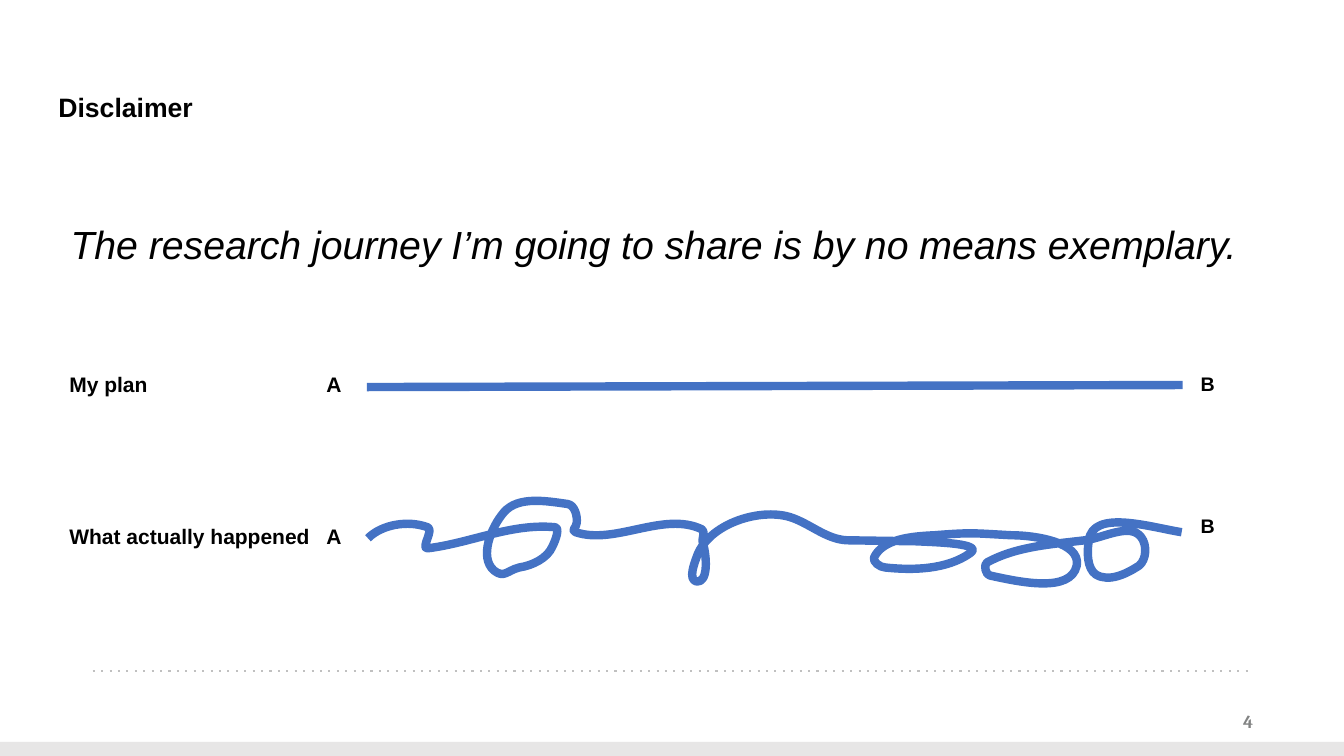
from lxml import etree
from pptx import Presentation
from pptx import util as u
from pptx.dml.color import RGBColor
from pptx.enum import dml, shapes, text
from pptx.oxml.ns import qn

COLORS = {"ink": "000000", "route": "4472C4", "dots": "C0C0C0",
          "number": "828383", "band": "E7E6E6"}
ROUTE_START = (3.65, 5.34)
ROUTE_CURVES = [
    (3.79, 5.2, 4.05, 5.16, 4.24, 5.23), (4.31, 5.25, 4.17, 5.44, 4.24, 5.44),
    (4.66, 5.39, 5.07, 5.19, 5.5, 5.23), (5.56, 5.23, 5.51, 5.36, 5.48, 5.42),
    (5.43, 5.54, 5.28, 5.61, 5.15, 5.63), (5.03, 5.66, 5, 5.74, 4.9, 5.66),
    (4.75, 5.53, 4.87, 5.23, 5, 5.08), (5.14, 4.92, 5.42, 4.97, 5.63, 5),
    (5.7, 5.01, 5.73, 5.12, 5.72, 5.19), (5.72, 5.23, 5.66, 5.26, 5.71, 5.28),
    (6.1, 5.41, 6.58, 5.07, 6.96, 5.25), (7, 5.27, 6.96, 5.34, 6.97, 5.38),
    (7.01, 5.51, 7.03, 5.78, 6.91, 5.77), (6.82, 5.75, 6.89, 5.58, 6.92, 5.5),
    (7.04, 5.21, 7.49, 5.05, 7.8, 5.12), (8.01, 5.17, 8.18, 5.35, 8.4, 5.36),
    (8.75, 5.37, 8.75, 5.36, 9.09, 5.37), (9.28, 5.38, 9.77, 5.39, 9.62, 5.49),
    (9.39, 5.65, 9.06, 5.66, 8.78, 5.63), (8.73, 5.63, 8.65, 5.57, 8.67, 5.53),
    (8.76, 5.34, 9.06, 5.32, 9.27, 5.31), (9.65, 5.28, 9.65, 5.29, 10.03, 5.31),
    (10.27, 5.31, 10.72, 5.38, 10.68, 5.61), (10.62, 5.89, 10.1, 5.77, 9.82, 5.71),
    (9.78, 5.71, 9.75, 5.6, 9.79, 5.58), (10.08, 5.42, 10.43, 5.4, 10.76, 5.36),
    (10.94, 5.34, 11.21, 5.18, 11.32, 5.33), (11.38, 5.41, 11.37, 5.55, 11.3, 5.61),
    (11.18, 5.69, 11, 5.78, 10.87, 5.7), (10.78, 5.64, 10.78, 5.47, 10.8, 5.36),
    (10.84, 5.05, 11.41, 5.23, 11.72, 5.28),
]


def color(name):
    """Return the named colour."""
    return RGBColor.from_string(COLORS[name])


def add_text(page, box, lines, size, bold=True, italic=False, font="Arial", tint="ink",
             align=text.PP_ALIGN.LEFT, anchor=text.MSO_ANCHOR.MIDDLE,
             inset=0.13, gap=0, tab=None):
    """Write lines in a box, with a gap in points between them."""
    frame = page.shapes.add_textbox(*map(u.Inches, box)).text_frame
    frame.word_wrap = True
    frame.vertical_anchor = anchor
    frame.margin_left = frame.margin_right = u.Inches(inset)
    frame.margin_top = frame.margin_bottom = u.Inches(inset)
    frame.text = "\n".join(lines)
    for index, para in enumerate(frame.paragraphs):
        if tab:
            stops = etree.SubElement(para._p.get_or_add_pPr(), qn("a:tabLst"))
            etree.SubElement(stops, qn("a:tab"), pos=str(u.Inches(tab)), algn="l")
        para.alignment = align
        if index:
            para.space_before = u.Pt(gap)
        for span in para.runs:
            span.font.name, span.font.size = font, u.Pt(size)
            span.font.bold, span.font.italic = bold, italic
            span.font.color.rgb = color(tint)


def add_line(page, start, end, tint, width):
    """Draw a straight line without a shadow."""
    line = page.shapes.add_connector(shapes.MSO_CONNECTOR.STRAIGHT,
                                     *map(u.Inches, start + end))
    line.line.color.rgb = color(tint)
    line.line.width = u.Pt(width)
    etree.SubElement(line._element.spPr, qn("a:effectLst"))
    return line


def add_winding_route(page, box):
    """Draw the looping route from A to B as a chain of curves."""
    left, top, width, height = map(u.Inches, box)
    builder = page.shapes.build_freeform(*map(u.Inches, ROUTE_START))
    builder.add_line_segments(
        [(u.Inches(curve[4]), u.Inches(curve[5])) for curve in ROUTE_CURVES], close=False)
    route = builder.convert_to_shape()
    route.left, route.top, route.width, route.height = left, top, width, height
    outline = route._element.spPr.find(".//" + qn("a:path"))
    outline.clear()
    outline.set("w", str(width))
    outline.set("h", str(height))
    for tag, values in [("a:moveTo", ROUTE_START)] + [
            ("a:cubicBezTo", curve) for curve in ROUTE_CURVES]:
        segment = etree.SubElement(outline, qn(tag))
        for x, y in zip(values[::2], values[1::2]):
            etree.SubElement(segment, qn("a:pt"), x=str(u.Inches(x) - left),
                             y=str(u.Inches(y) - top))
    route.shadow.inherit = False
    route.fill.background()
    route.line.color.rgb = color("route")
    route.line.width = u.Pt(6)


def add_journeys(page, box):
    """Draw the planned and the actual journey with their labels."""
    left, top, width, height = box
    add_line(page, (left + 3.05, top + 0.25), (left + 11.14, top + 0.23), "route", 6)
    add_winding_route(page, (left + 3.06, top + 1.38, 8.07, 0.82))
    add_text(page, (left, top, 3.14, 2.12), ["My plan\tA", "What actually happened\tA"],
             15, anchor=text.MSO_ANCHOR.TOP, inset=0.1, gap=90.5, tab=2.55)
    add_text(page, (left + width - 0.63, top, 0.63, height), ["B", "B"], 14,
             anchor=text.MSO_ANCHOR.TOP, inset=0.1, gap=84.5)


def add_heading(page, box):
    """Write the title and the statement below it."""
    left, top, width, height = box
    add_text(page, (left, top, width, 0.83), ["Disclaimer"], 19)
    add_text(page, (left + 0.12, top + height - 1.1, width - 0.12, 1.1),
             ["The research journey I’m going to share is by no means exemplary."],
             28, bold=False, italic=True)


def add_footer(page, box):
    """Draw the dotted rule, page number and bottom band."""
    left, top, width, height = box
    rule = add_line(page, (left + 0.92, top), (left + 12.42, top), "dots", 1.5)
    rule.line.dash_style = dml.MSO_LINE.ROUND_DOT
    rule._element.spPr.find(".//" + qn("a:prstDash")).set("val", "dot")
    add_text(page, (left + 9.56, top + 0.3, 3, 0.4), ["4"], 13, font="Cambria",
             tint="number", align=text.PP_ALIGN.RIGHT)
    band = page.shapes.add_shape(
        shapes.MSO_SHAPE.RECTANGLE,
        *map(u.Inches, (left, top + height - 0.14, width, 0.14)))
    band.shadow.inherit = False
    band.fill.solid()
    band.fill.fore_color.rgb = color("band")
    band.line.fill.background()


def main():
    """Build and save the deck."""
    deck = Presentation()
    deck.slide_width, deck.slide_height = u.Inches(13.33), u.Inches(7.5)
    page = deck.slides.add_slide(deck.slide_layouts[6])
    add_footer(page, (0, 6.66, 13.33, 0.84))
    add_heading(page, (0.45, 0.65, 12.42, 2.32))
    add_journeys(page, (0.59, 3.59, 11.85, 2.61))
    deck.save("out.pptx")


if __name__ == "__main__":
    main()
